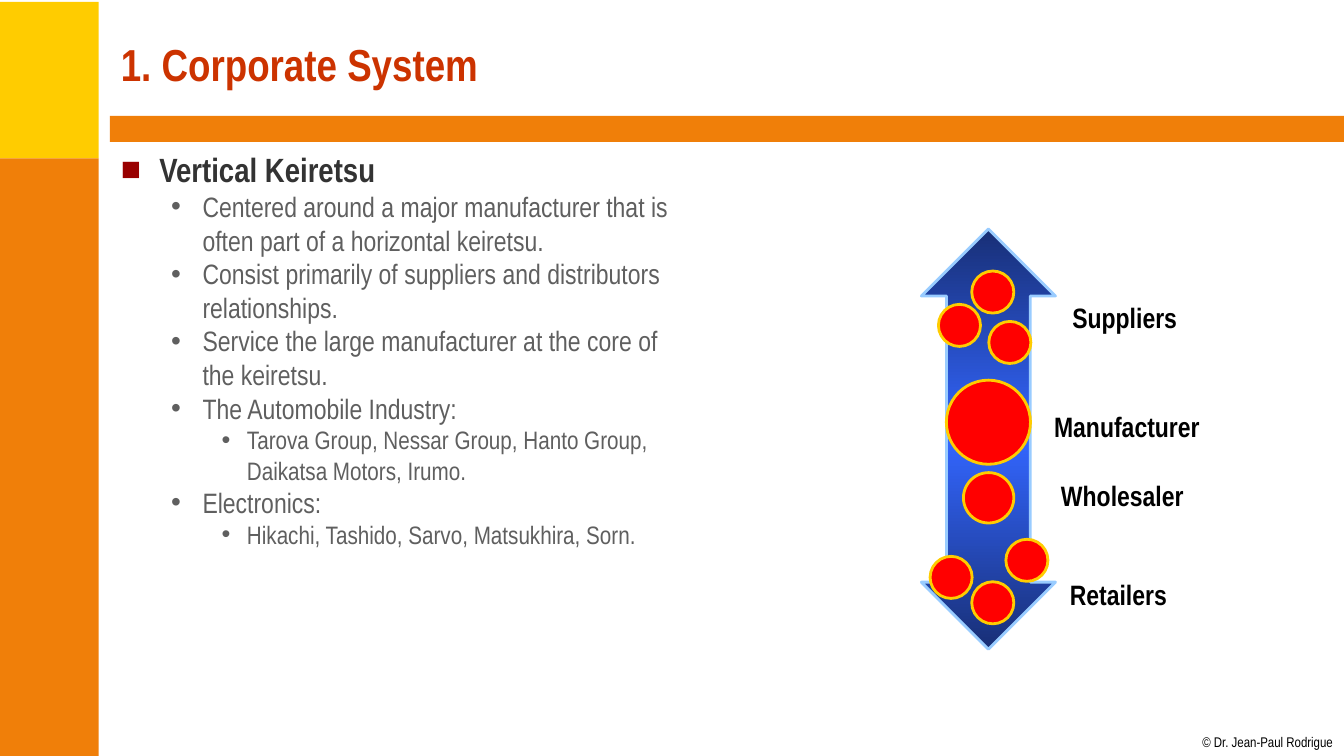
from copy import deepcopy

from lxml.etree import SubElement
from pptx import Presentation
from pptx.dml.color import RGBColor
from pptx.enum.shapes import MSO_SHAPE
from pptx.enum.text import MSO_ANCHOR, MSO_AUTO_SIZE, PP_ALIGN
from pptx.oxml.ns import qn
from pptx.util import Cm, Pt


def add_run(para, text, size, color, bold=False):
    span = para.add_run()
    span.text = text
    span.font.name = "Arial Narrow"
    span.font.size = Pt(size)
    span.font.bold = bold
    span.font.color.rgb = RGBColor.from_string(color)


def add_figure(kind, left, top, width, height, fill, line=None):
    """Add a preset shape; without a line colour it has no outline."""
    figure = page.shapes.add_shape(kind, Cm(left), Cm(top), Cm(width), Cm(height))
    figure.shadow.inherit = False
    figure.fill.solid()
    figure.fill.fore_color.rgb = RGBColor.from_string(fill)
    if line:
        figure.line.color.rgb = RGBColor.from_string(line)
        figure.line.width = Pt(2)
    else:
        figure.line.fill.background()
    return figure


deck = Presentation()
deck.slide_width = Cm(33.87)
deck.slide_height = Cm(19.05)
page = deck.slides.add_slide(deck.slide_layouts[1])

# Side column and title bar
add_figure(MSO_SHAPE.RECTANGLE, 0, 0.05, 2.49, 3.94, "FFCC00")
add_figure(MSO_SHAPE.RECTANGLE, 0, 3.99, 2.49, 15.06, "F07F09")
add_figure(MSO_SHAPE.RECTANGLE, 2.77, 2.92, 31.1, 0.66, "F07F09")

# Title
title = page.shapes.title
title.left, title.top, title.width, title.height = Cm(2.79), Cm(0.28), Cm(30.48), Cm(2.64)
title.text_frame.vertical_anchor = MSO_ANCHOR.MIDDLE
title.text_frame.auto_size = MSO_AUTO_SIZE.NONE
heading = title.text_frame.paragraphs[0]
heading.alignment = PP_ALIGN.LEFT
add_run(heading, "1. Corporate System", 32, "CC3300", bold=True)

# Bulleted list: margin and hanging indent in cm, bullet and its colour, text style
LEVELS = [
    (0.97, 0.97, "■", "990000", 24, "333333", True),
    (2.06, 0.79, "•", "5F5F5F", 20, "5F5F5F", False),
    (3.18, 0.64, "•", "5F5F5F", 18, "5F5F5F", False),
]
ITEMS = [
    (0, "Vertical Keiretsu"),
    (1, "Centered around a major manufacturer that is often part of a horizontal keiretsu."),
    (1, "Consist primarily of suppliers and distributors relationships."),
    (1, "Service the large manufacturer at the core of the keiretsu."),
    (1, "The Automobile Industry:"),
    (2, "Tarova Group, Nessar Group, Hanto Group, Daikatsa Motors, Irumo."),
    (1, "Electronics:"),
    (2, "Hikachi, Tashido, Sarvo, Matsukhira, Sorn."),
]
body = page.placeholders[1]
body.left, body.top, body.width, body.height = Cm(2.79), Cm(3.63), Cm(14.99), Cm(14.71)
body.text_frame.auto_size = MSO_AUTO_SIZE.NONE
for number, (level, text) in enumerate(ITEMS):
    margin, hanging, bullet, bullet_color, size, color, bold = LEVELS[level]
    para = body.text_frame.add_paragraph() if number else body.text_frame.paragraphs[0]
    para.level = level
    para.space_before = Pt(0)
    properties = para._p.get_or_add_pPr()
    properties.set("marL", str(Cm(margin)))
    properties.set("indent", str(-Cm(hanging)))
    tint = SubElement(properties, qn("a:buClr"))
    SubElement(tint, qn("a:srgbClr"), val=bullet_color)
    SubElement(properties, qn("a:buFont"), typeface="Arial")
    SubElement(properties, qn("a:buChar"), char=bullet)
    add_run(para, text, size, color, bold)

# Two-way arrow, dark at both tips
arrow = add_figure(MSO_SHAPE.UP_DOWN_ARROW, 23.22, 5.77, 3.38, 10.59, "3366FF", "99CCFF")
arrow.adjustments[0] = 0.5
arrow.adjustments[1] = 0.625
arrow.fill.gradient()
arrow.fill.gradient_angle = 90
stop_list = arrow.fill._fill._gradFill.find(qn("a:gsLst"))
stop_list.insert(1, deepcopy(stop_list[0]))
for stop, position, color in zip(arrow.fill.gradient_stops, (0, 0.5, 1), ("182F76", "3366FF", "182F76")):
    stop.position = position
    stop.color.rgb = RGBColor.from_string(color)

# Companies along the arrow: left, top, diameter
COMPANIES = [
    (23.85, 9.58, 2.12),
    (23.65, 7.67, 1.06), (24.49, 6.83, 1.06), (24.92, 8.1, 1.06),
    (24.28, 11.91, 1.27),
    (23.44, 14.02, 1.06), (24.49, 14.66, 1.06), (25.35, 13.59, 1.06),
]
for left, top, diameter in COMPANIES:
    add_figure(MSO_SHAPE.OVAL, left, top, diameter, diameter, "FF0000", "FFCC00")

# Labels: left, top, width
LABELS = [
    ("Suppliers", 26.72, 7.44, 3.25),
    ("Manufacturer", 26.29, 10.19, 4.22),
    ("Wholesaler", 26.47, 11.94, 3.63),
    ("Retailers", 26.7, 14.43, 2.97),
]
for text, left, top, width in LABELS:
    box = page.shapes.add_textbox(Cm(left), Cm(top), Cm(width), Cm(1.12))
    box.text_frame.word_wrap = False
    para = box.text_frame.paragraphs[0]
    para.alignment = PP_ALIGN.CENTER
    add_run(para, text, 20, "000000", bold=True)

# Copyright line
box = page.shapes.add_textbox(Cm(30.3), Cm(18.49), Cm(3.33), Cm(0.43))
frame = box.text_frame
frame.word_wrap = False
frame.margin_left = frame.margin_right = frame.margin_top = frame.margin_bottom = 0
add_run(frame.paragraphs[0], "© Dr. Jean-Paul Rodrigue", 10, "000000")

deck.save("out.pptx")
